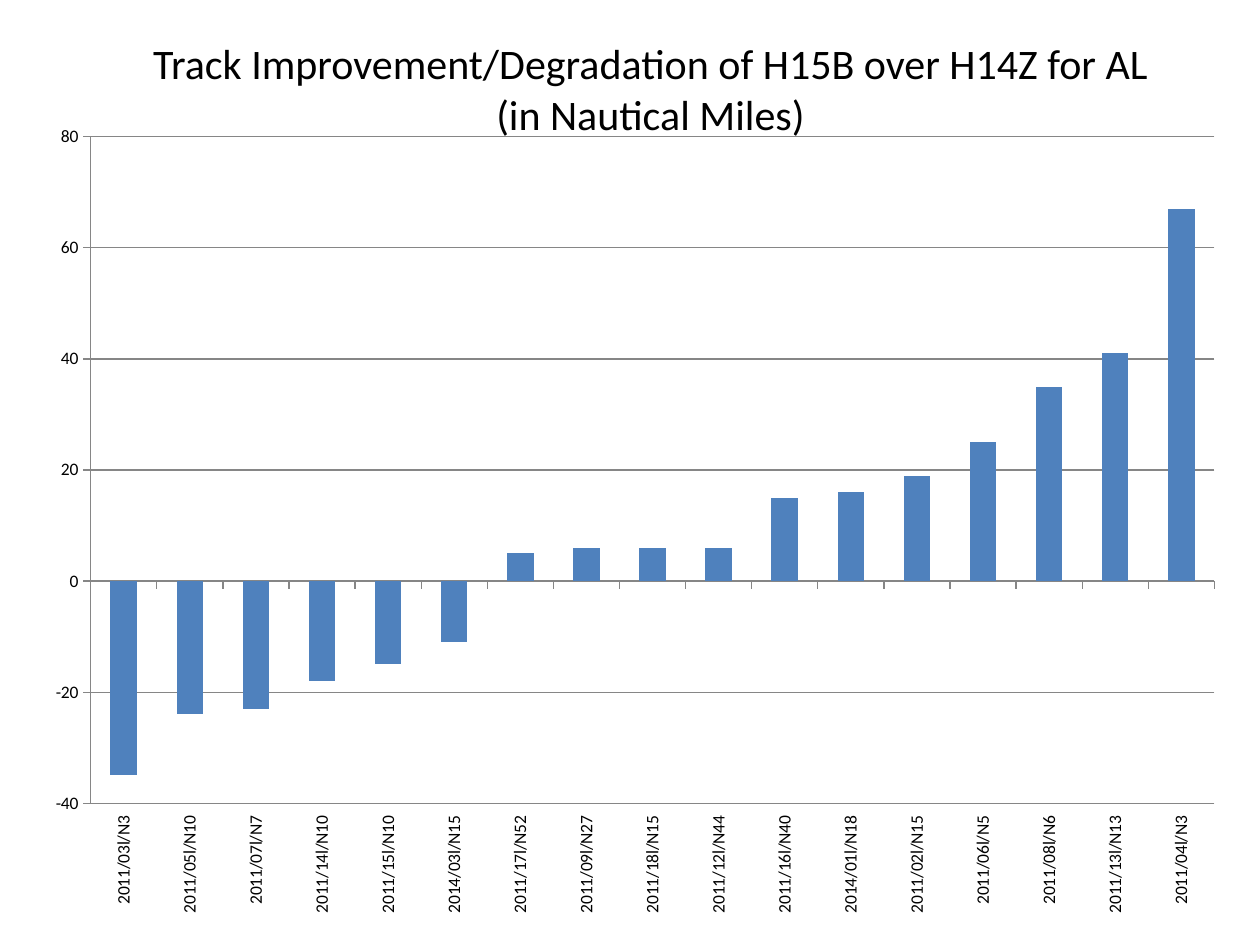
from dataclasses import dataclass

from lxml.etree import SubElement
from pptx import Presentation
from pptx.chart.data import CategoryChartData
from pptx.dml.color import RGBColor
from pptx.enum.chart import XL_CHART_TYPE, XL_TICK_LABEL_POSITION, XL_TICK_MARK
from pptx.enum.text import MSO_AUTO_SIZE, PP_ALIGN
from pptx.oxml.ns import qn
from pptx.util import Cm, Pt


@dataclass(frozen=True)
class Theme:
    font: str = "Calibri"
    text: RGBColor = RGBColor(0x00, 0x00, 0x00)
    bar: RGBColor = RGBColor(0x4F, 0x81, 0xBD)
    line: RGBColor = RGBColor(0x86, 0x86, 0x86)
    title_size: Pt = Pt(24)
    label_size: Pt = Pt(10)
    line_width: Pt = Pt(0.75)


THEME = Theme()

TITLE_LINES = [
    "Track Improvement/Degradation of H15B over H14Z for AL",
    "(in Nautical Miles)",
]

# Storm and number of cases, with the track change in nautical miles
TRACK_CHANGES = {
    "2011/03l/N3": -35, "2011/05l/N10": -24, "2011/07l/N7": -23,
    "2011/14l/N10": -18, "2011/15l/N10": -15, "2014/03l/N15": -11,
    "2011/17l/N52": 5, "2011/09l/N27": 6, "2011/18l/N15": 6,
    "2011/12l/N44": 6, "2011/16l/N40": 15, "2014/01l/N18": 16,
    "2011/02l/N15": 19, "2011/06l/N5": 25, "2011/08l/N6": 35,
    "2011/13l/N13": 41, "2011/04l/N3": 67,
}


def style_font(font, size):
    font.name = THEME.font
    font.size = size
    font.color.rgb = THEME.text


def style_line(line):
    line.color.rgb = THEME.line
    line.width = THEME.line_width


def place_plot(chart, **fractions):
    """Fix the inner plot area as fractions (x, y, w, h) of the chart."""
    plot_area = chart.plots[0]._element.getparent()
    layout = plot_area.find(qn("c:layout"))
    if layout is None:
        layout = plot_area.makeelement(qn("c:layout"))
        plot_area.insert(0, layout)
    manual = SubElement(layout, qn("c:manualLayout"))
    settings = {"layoutTarget": "inner", "xMode": "edge", "yMode": "edge", **fractions}
    for name, value in settings.items():
        SubElement(manual, qn(f"c:{name}")).set("val", str(value))


def add_track_chart(page, left, top, width, height):
    data = CategoryChartData()
    data.categories = list(TRACK_CHANGES)
    data.add_series("Series 1", list(TRACK_CHANGES.values()))
    chart = page.shapes.add_chart(
        XL_CHART_TYPE.COLUMN_CLUSTERED, left, top, width, height, data
    ).chart
    chart.has_legend = False
    chart.has_title = False
    style_font(chart.font, THEME.label_size)
    place_plot(chart, x=0.05, y=0.03, w=0.93, h=0.81)

    # Columns
    plot = chart.plots[0]
    plot.gap_width = 150
    plot.vary_by_categories = False
    series = plot.series[0]
    series.invert_if_negative = False
    series.format.fill.solid()
    series.format.fill.fore_color.rgb = THEME.bar

    # Axes
    for axis in (chart.category_axis, chart.value_axis):
        axis.major_tick_mark = XL_TICK_MARK.OUTSIDE
        axis.minor_tick_mark = XL_TICK_MARK.NONE
        style_line(axis.format.line)
        style_font(axis.tick_labels.font, THEME.label_size)

    storms = chart.category_axis
    storms.tick_label_position = XL_TICK_LABEL_POSITION.LOW
    label_body = storms._element.find(qn("c:txPr")).find(qn("a:bodyPr"))
    label_body.set("rot", "-5400000")
    label_body.set("vert", "horz")

    miles = chart.value_axis
    miles.minimum_scale, miles.maximum_scale, miles.major_unit = -40, 80, 20
    miles.has_major_gridlines = True
    style_line(miles.major_gridlines.format.line)


def add_title(page, left, top, width, height):
    box = page.shapes.add_textbox(left, top, width, height)
    frame = box.text_frame
    frame.word_wrap = True
    frame.auto_size = MSO_AUTO_SIZE.SHAPE_TO_FIT_TEXT
    frame.text = "\n".join(TITLE_LINES)
    for para in frame.paragraphs:
        para.alignment = PP_ALIGN.CENTER
        for span in para.runs:
            style_font(span.font, THEME.title_size)


def main():
    deck = Presentation()
    deck.slide_width, deck.slide_height = Cm(25.4), Cm(19.05)
    page = deck.slides.add_slide(deck.slide_layouts[6])
    add_track_chart(page, Cm(0.61), Cm(2.26), Cm(24.36), Cm(16.59))
    add_title(page, Cm(1.47), Cm(0.64), Cm(23.29), Cm(2.31))
    deck.save("out.pptx")


if __name__ == "__main__":
    main()
